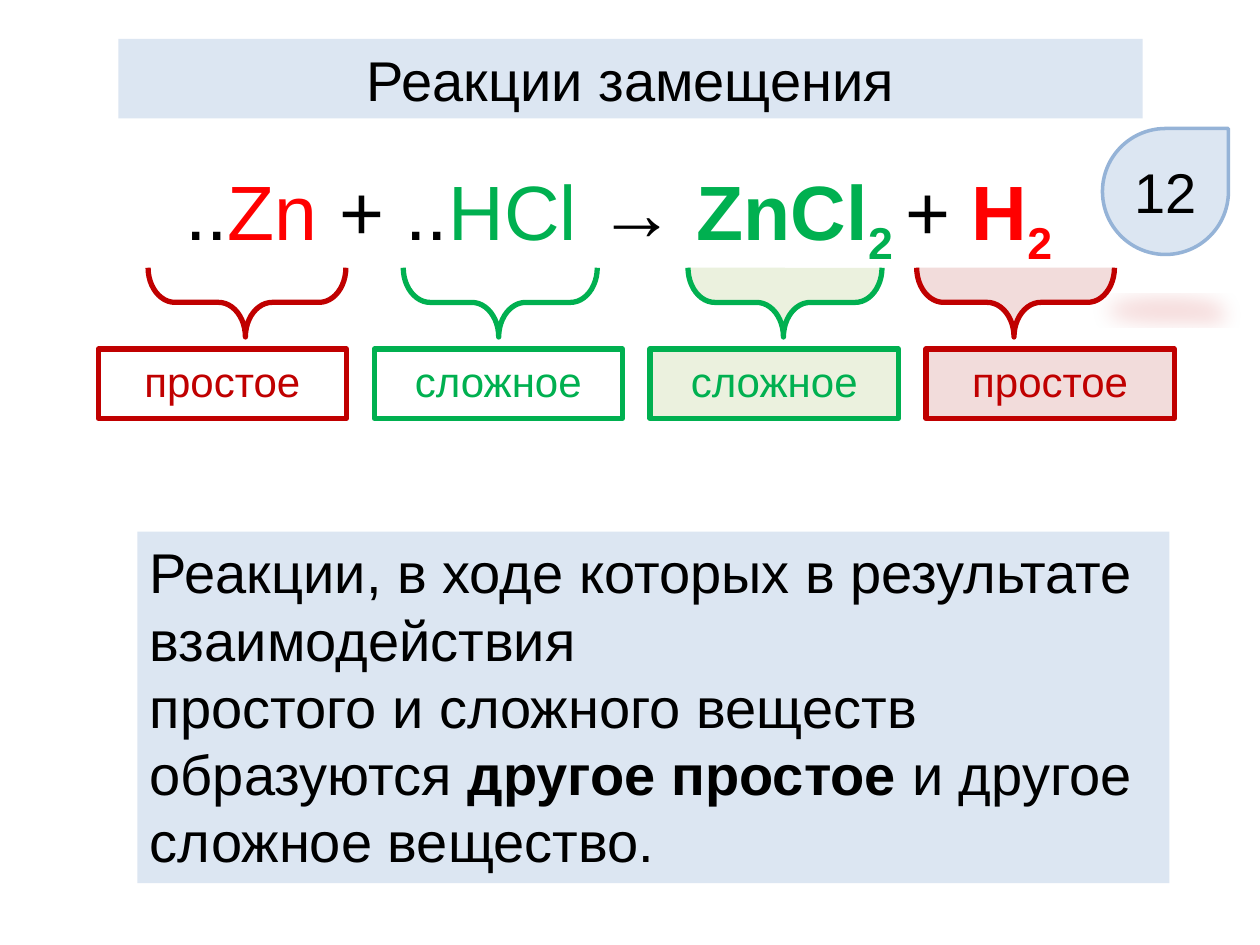
from lxml.etree import SubElement
from pptx import Presentation
from pptx.dml.color import RGBColor
from pptx.enum.shapes import MSO_SHAPE as Shape
from pptx.enum.text import MSO_ANCHOR as Anchor, MSO_AUTO_SIZE as AutoSize, PP_ALIGN as Align
from pptx.oxml.ns import qn
from pptx.util import Inches, Pt

COLORS = {
    "black": "000000",
    "red": "FF0000",
    "dark_red": "C00000",
    "green": "00B050",
    "pale_blue": "DCE6F2",
    "blue": "95B3D7",
    "pale_green": "EBF1DE",
    "pale_red": "F2DCDB",
}


def color(name):
    return RGBColor.from_string(COLORS[name])


def add_span(para, text, size=32, font="Arial", ink="black", bold=False, baseline=0):
    span = para.add_run()
    span.text = text
    span.font.size = Pt(size)
    span.font.name = font
    span.font.bold = bold
    span.font.color.rgb = color(ink)
    if baseline:
        span.font._element.set("baseline", str(baseline * 1000))


class Page:
    def __init__(self, deck):
        self.slide = deck.slides.add_slide(deck.slide_layouts[6])

    def fill_text(self, box, lines, align=Align.CENTER, anchor=Anchor.TOP, wrap=True, grow=False, **style):
        frame = box.text_frame
        frame.word_wrap = wrap
        frame.vertical_anchor = anchor
        frame.auto_size = AutoSize.SHAPE_TO_FIT_TEXT if grow else AutoSize.NONE
        for index, line in enumerate(lines):
            para = frame.add_paragraph() if index else frame.paragraphs[0]
            para.alignment = align
            for text, changes in line:
                add_span(para, text, **{**style, **changes})

    def text(self, place, lines, **style):
        box = self.slide.shapes.add_textbox(*map(Inches, place))
        self.fill_text(box, lines, **style)

    def shape(self, kind, place, fill=None, line=None, weight=3):
        box = self.slide.shapes.add_shape(kind, *map(Inches, place))
        box.shadow.inherit = False
        if fill:
            box.fill.solid()
            box.fill.fore_color.rgb = color(fill)
        else:
            box.fill.background()
        if line:
            box.line.color.rgb = color(line)
            box.line.width = Pt(weight)
        else:
            box.line.fill.background()
        return box

    def panel(self, place, lines, fill=None, line=None, **style):
        box = self.shape(Shape.RECTANGLE, place, fill, line)
        self.fill_text(box, lines, **style)

    def brace(self, center, middle, length, fill, line):
        depth = 0.55
        place = (center - depth / 2, middle - length / 2, depth, length)
        box = self.shape(Shape.RIGHT_BRACE, place, fill, line)
        box.rotation = 90
        box.adjustments[0] = 0.388
        box.adjustments[1] = 0.508

    def badge(self, place, text):
        box = self.shape(Shape.TEAR, place, "pale_blue", "blue", 2)
        effects = box._element.spPr.find(qn("a:effectLst"))
        shadow = SubElement(
            effects, qn("a:outerShdw"), blurRad=str(Pt(12)), dist=str(Pt(25)),
            dir="5400000", sx="90000", sy="-19000", rotWithShape="0",
        )
        tint = SubElement(shadow, qn("a:srgbClr"), val=COLORS["dark_red"])
        SubElement(tint, qn("a:alpha"), val="15000")
        self.fill_text(box, [[(text, {})]], anchor=Anchor.MIDDLE)


def main():
    deck = Presentation()
    deck.slide_width = Inches(10)
    deck.slide_height = Inches(7.5)
    page = Page(deck)

    product = {"ink": "green", "bold": True}
    gas = {"ink": "red", "bold": True}
    equation = [
        ("..", {}), ("Zn ", {"ink": "red"}), ("+ ..", {}), ("HCl ", {"ink": "green"}), ("→ ", {}),
        ("ZnCl", product), ("2 ", {**product, "baseline": -25}), ("+ ", {}),
        ("H", gas), ("2", {**gas, "baseline": -25}),
    ]
    page.text((1.25, 1.25, 7.32, 0.84), [equation], size=44, wrap=False, grow=True)
    page.panel((0.94, 0.31, 8.13, 0.63), [[("Реакции замещения", {})]], "pale_blue", anchor=Anchor.MIDDLE)
    page.badge((8.75, 1.02, 1, 1), "12")

    definition = [
        [("Реакции, в ходе которых в результате", {})],
        [("взаимодействия", {})],
        [("простого и сложного веществ", {})],
        [("образуются ", {}), ("другое простое ", {"bold": True}), ("и другое", {})],
        [("сложное вещество.", {})],
    ]
    page.panel((1.09, 4.22, 8.19, 2.79), definition, "pale_blue", align=Align.LEFT, wrap=False, grow=True)

    substances = [
        ("простое", 1.96, 1.57, None, "dark_red"),
        ("сложное", 3.97, 1.54, None, "green"),
        ("сложное", 6.23, 1.54, "pale_green", "green"),
        ("простое", 8.06, 1.57, "pale_red", "dark_red"),
    ]
    for index, (name, center, length, fill, line) in enumerate(substances):
        page.brace(center, 2.4, length, fill, line)
        label = (0.78 + 2.19 * index, 2.77, 1.97, 0.55)
        page.panel(label, [[(name, {})]], fill, line, size=24, ink=line, grow=True)

    deck.save("out.pptx")


if __name__ == "__main__":
    main()
